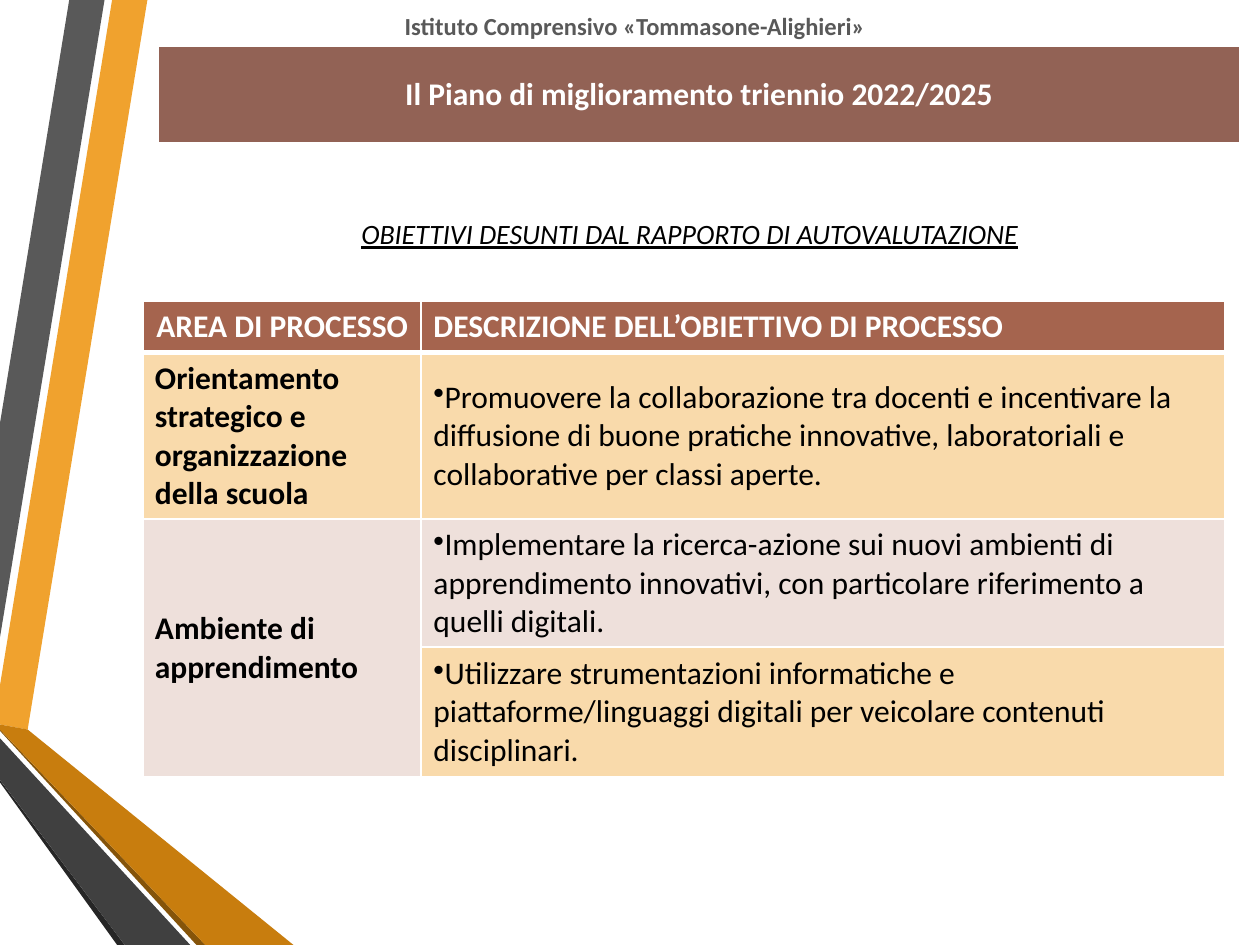
from lxml import etree
from pptx import Presentation
from pptx.dml.color import RGBColor
from pptx.enum.text import MSO_ANCHOR, MSO_AUTO_SIZE, PP_ALIGN
from pptx.oxml.ns import qn
from pptx.util import Inches, Pt

CENTER, LEFT = PP_ALIGN.CENTER, PP_ALIGN.LEFT
TOP, MIDDLE = MSO_ANCHOR.TOP, MSO_ANCHOR.MIDDLE
NO_AUTOFIT = MSO_AUTO_SIZE.NONE

TITLE_ONLY = 5
FONT = "Calibri"

WHITE = RGBColor(0xFF, 0xFF, 0xFF)
BLACK = RGBColor(0x00, 0x00, 0x00)
GREY = RGBColor(0x59, 0x59, 0x59)
DARK_GREY = RGBColor(0x40, 0x40, 0x40)
NEAR_BLACK = RGBColor(0x26, 0x26, 0x26)
ORANGE = RGBColor(0xF0, 0xA2, 0x2E)
DARK_ORANGE = RGBColor(0xC8, 0x7D, 0x0E)
OCHRE = RGBColor(0x85, 0x54, 0x0A)
BAND_BROWN = RGBColor(0x92, 0x62, 0x55)
HEADER_BROWN = RGBColor(0xA5, 0x64, 0x4E)
SAND = RGBColor(0xF9, 0xDA, 0xAB)
ROSE = RGBColor(0xEE, 0xE0, 0xDB)

# Decorative ribbons from back to front: colour and outline in inches
RIBBONS = [
    (ORANGE, [(0, 5.44), (0, 5.75), (0.22, 5.79), (1.17, 0), (0.89, 0)]),
    (GREY, [(0.83, 0), (0.55, 0), (0, 3.36), (0, 5.06)]),
    (NEAR_BLACK, [(0, 6.19), (0, 6.21), (0.93, 7.5), (0.99, 7.5)]),
    (OCHRE, [(0, 5.79), (0, 5.8), (1.56, 7.5), (1.63, 7.5)]),
    (DARK_ORANGE, [(0, 5.79), (1.63, 7.5), (2.33, 7.5), (0.22, 5.79), (0, 5.75)]),
    (DARK_GREY, [(0, 6.19), (0.99, 7.5), (1.51, 7.5), (0, 5.86)]),
]

HEADERS = ["AREA DI PROCESSO", "DESCRIZIONE DELL’OBIETTIVO DI PROCESSO"]
# Area (None where the area above continues), objective, fill
OBJECTIVES = [
    ("Orientamento strategico e organizzazione della scuola",
     "Promuovere la collaborazione tra docenti e incentivare la diffusione di "
     "buone pratiche innovative, laboratoriali e collaborative per classi aperte.",
     SAND),
    ("Ambiente di apprendimento",
     "Implementare la ricerca-azione sui nuovi ambienti di apprendimento "
     "innovativi, con particolare riferimento a quelli digitali.",
     ROSE),
    (None,
     "Utilizzare strumentazioni informatiche e piattaforme/linguaggi digitali "
     "per veicolare contenuti disciplinari.",
     SAND),
]


class SlideBuilder:
    def __init__(self, slide, font):
        self.slide = slide
        self.font = font

    def set_text(self, frame, text, size, color, align=LEFT,
                 bold=False, italic=False, underline=False):
        frame.text = text
        frame.word_wrap = True
        paragraph = frame.paragraphs[0]
        paragraph.alignment = align
        font = paragraph.runs[0].font
        font.name, font.size = self.font, Pt(size)
        font.color.rgb = color
        font.bold, font.italic, font.underline = bold, italic, underline

    def ribbon(self, color, points):
        outline = [(Inches(x), Inches(y)) for x, y in points]
        builder = self.slide.shapes.build_freeform(*outline[0])
        builder.add_line_segments(outline[1:], close=True)
        shape = builder.convert_to_shape()
        shape.shadow.inherit = False
        shape.fill.solid()
        shape.fill.fore_color.rgb = color
        shape.line.fill.background()

    def title(self, text, left, top, width, height, **style):
        title = self.slide.shapes.title
        title.left, title.top = Inches(left), Inches(top)
        title.width, title.height = Inches(width), Inches(height)
        title.text_frame.auto_size = NO_AUTOFIT
        title.text_frame.vertical_anchor = TOP
        self.set_text(title.text_frame, text, **style)

    def label(self, text, left, top, width, height, **style):
        box = self.slide.shapes.add_textbox(
            Inches(left), Inches(top), Inches(width), Inches(height))
        self.set_text(box.text_frame, text, **style)

    def table(self, left, top, widths, heights):
        table = self.slide.shapes.add_table(
            len(heights), len(widths), Inches(left), Inches(top),
            Inches(sum(widths)), Inches(sum(heights))).table
        table.first_row = table.horz_banding = False
        for column, width in zip(table.columns, widths):
            column.width = Inches(width)
        for row, height in zip(table.rows, heights):
            row.height = Inches(height)
        return table

    def cell(self, cell, text, fill, **style):
        cell.fill.solid()
        cell.fill.fore_color.rgb = fill
        cell.vertical_anchor = MIDDLE
        if text:
            self.set_text(cell.text_frame, text, size=18, **style)

    def bullet(self, cell):
        properties = cell.text_frame.paragraphs[0]._p.get_or_add_pPr()
        properties.set("marL", "0")
        properties.set("indent", "0")
        etree.SubElement(properties, qn("a:buChar"), char="•")

    def borders(self, cell, color, **widths):
        properties = cell._tc.get_or_add_tcPr()
        for index, side in enumerate("LRTB"):
            line = etree.Element(qn(f"a:ln{side}"), w=str(Pt(widths.get(side, 1))))
            fill = etree.SubElement(line, qn("a:solidFill"))
            etree.SubElement(fill, qn("a:srgbClr"), val=str(color))
            properties.insert(index, line)


def main():
    prs = Presentation()
    prs.slide_width, prs.slide_height = Inches(10), Inches(7.5)
    page = SlideBuilder(prs.slides.add_slide(prs.slide_layouts[TITLE_ONLY]), FONT)

    # Ribbons on the left edge
    for color, points in RIBBONS:
        page.ribbon(color, points)

    # Section title
    page.title("OBIETTIVI DESUNTI DAL RAPPORTO DI AUTOVALUTAZIONE",
               1.38, 1.67, 8.19, 0.37, size=16, color=BLACK, align=CENTER,
               italic=True, underline=True)

    # Objectives table
    objectives = page.table(1.14, 2.39, [2.2, 6.38], [0.41, 1.3, 1, 1.03])
    for column, header in enumerate(HEADERS):
        page.cell(objectives.cell(0, column), header, HEADER_BROWN, color=WHITE,
                  align=LEFT if column else CENTER, bold=True)
    for row, (area, objective, fill) in enumerate(OBJECTIVES, start=1):
        area_cell, objective_cell = objectives.cell(row, 0), objectives.cell(row, 1)
        page.cell(area_cell, area, fill, color=BLACK, bold=True)
        page.cell(objective_cell, objective, fill, color=BLACK)
        page.bullet(objective_cell)
        if area is None:
            objectives.cell(row - 1, 0).merge(area_cell)
    for row in range(len(objectives.rows)):
        heavy = {0: {"B": 3}, 1: {"T": 3}}.get(row, {})
        for column in range(len(HEADERS)):
            cell = objectives.cell(row, column)
            page.borders(cell, WHITE, **heavy)
            if column == 0:
                cell.margin_left = cell.margin_right = Inches(0.09)

    # School name and plan band
    page.label("Istituto Comprensivo «Tommasone-Alighieri»", 1.14, 0.04, 7.8, 0.34,
               size=14, color=GREY, align=CENTER, bold=True)
    band = page.table(1.26, 0.37, [8.58], [0.76])
    page.cell(band.cell(0, 0), "Il Piano di miglioramento triennio 2022/2025",
              BAND_BROWN, color=WHITE, align=CENTER, bold=True)

    prs.save("out.pptx")


if __name__ == "__main__":
    main()
